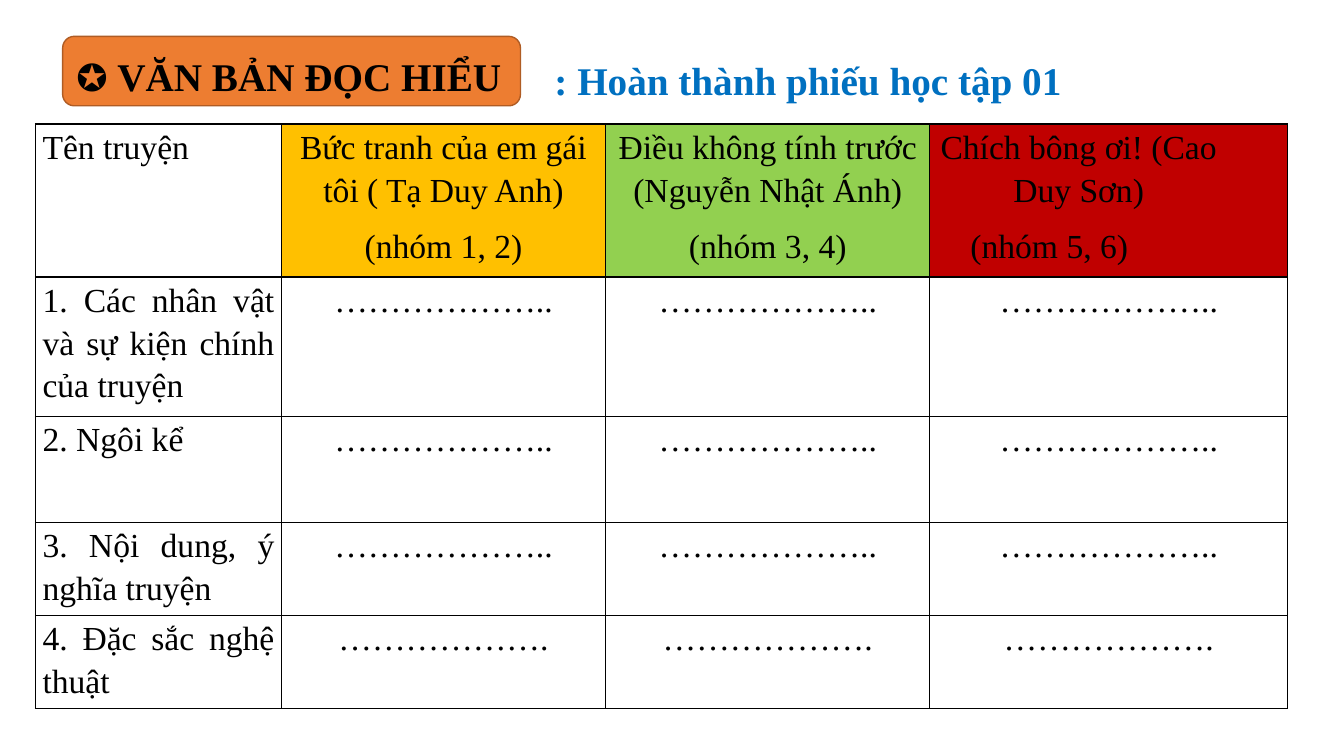
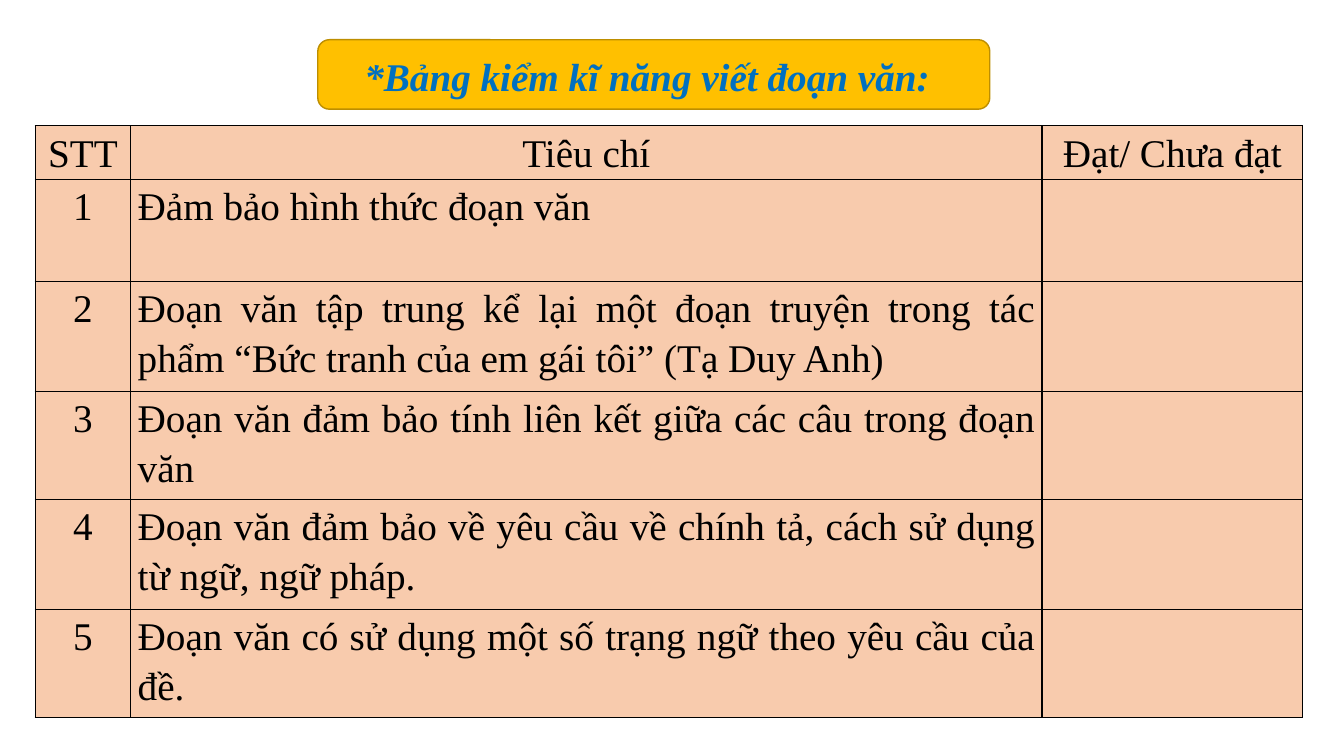
from dataclasses import dataclass

from lxml import etree
from pptx import Presentation
from pptx.dml.color import RGBColor
from pptx.enum import shapes, text
from pptx.oxml import ns
from pptx.util import Pt

LEFT, CENTER, JUSTIFY = text.PP_ALIGN.LEFT, text.PP_ALIGN.CENTER, text.PP_ALIGN.JUSTIFY


@dataclass(frozen=True)
class Theme:
    font: str = "Times New Roman"
    title_size: int = 28
    body_size: int = 24
    line_spacing: float = 1.15
    ink: str = "000000"
    blue: str = "0070C0"
    orange: str = "ED7D31"
    orange_edge: str = "AF5C24"
    gold: str = "FFC000"
    gold_edge: str = "BD8E00"
    green: str = "92D050"
    red: str = "C00000"
    peach: str = "F8CBAD"


THEME = Theme()


def rgb(value):
    return RGBColor.from_string(value)


def write(paragraph, words, size=THEME.title_size, color=THEME.ink, bold=False,
          italic=False, align=JUSTIFY, after=0):
    """Add a run to the paragraph and set the format of both."""
    paragraph.alignment = align
    paragraph.line_spacing = THEME.line_spacing
    paragraph.space_after = Pt(after)
    run = paragraph.add_run()
    run.text = words
    font = run.font
    font.name, font.size, font.bold, font.italic = THEME.font, Pt(size), bold, italic
    font.color.rgb = rgb(color)


def outline(cell):
    """Draw the four borders of a table cell; they must precede its fill."""
    properties = cell._tc.get_or_add_tcPr()
    for index, side in enumerate(("a:lnL", "a:lnR", "a:lnT", "a:lnB")):
        border = etree.Element(ns.qn(side), w=str(Pt(1)))
        fill = etree.SubElement(border, ns.qn("a:solidFill"))
        etree.SubElement(fill, ns.qn("a:srgbClr"), val=THEME.ink)
        properties.insert(index, border)


class Deck:
    def __init__(self):
        self.presentation = Presentation()
        self.presentation.slide_width = Pt(960)
        self.presentation.slide_height = Pt(540)
        self.slide = None

    def new_slide(self):
        self.slide = self.presentation.slides.add_slide(self.presentation.slide_layouts[5])

    def banner(self, left, top, width, height, fill, edge):
        band = self.slide.shapes.add_shape(
            shapes.MSO_SHAPE.ROUNDED_RECTANGLE, Pt(left), Pt(top), Pt(width), Pt(height))
        band.shadow.inherit = False
        band.fill.solid()
        band.fill.fore_color.rgb = rgb(fill)
        band.line.color.rgb = rgb(edge)
        band.line.width = Pt(1)

    def place(self, box, left, top, width, height):
        """Position a text holder and return its first paragraph."""
        box.left, box.top, box.width, box.height = Pt(left), Pt(top), Pt(width), Pt(height)
        frame = box.text_frame
        frame.word_wrap = True
        frame.auto_size = text.MSO_AUTO_SIZE.NONE
        frame.vertical_anchor = text.MSO_ANCHOR.TOP
        return frame.paragraphs[0]

    def title(self, *bounds):
        """Bring the title placeholder in front of its banner."""
        title = self.slide.shapes.title
        self.slide.shapes._spTree.append(title._element)
        return self.place(title, *bounds)

    def label(self, *bounds):
        return self.place(self.slide.shapes.add_textbox(0, 0, 0, 0), *bounds)

    def table(self, left, top, widths, heights, rows, size, after, align, fill):
        """Build a table; align and fill give a cell's style from its row and column."""
        grid = self.slide.shapes.add_table(
            len(rows), len(widths), Pt(left), Pt(top), Pt(sum(widths)), Pt(sum(heights))).table
        grid.first_row = grid.horz_banding = False
        for column, width in zip(grid.columns, widths):
            column.width = Pt(width)
        for r, (row, height) in enumerate(zip(rows, heights)):
            grid.rows[r].height = Pt(height)
            for c, words in enumerate(row):
                cell = grid.cell(r, c)
                cell.margin_left = cell.margin_right = Pt(5)
                cell.margin_top = cell.margin_bottom = 0
                color = fill(r, c)
                if color:
                    cell.fill.solid()
                    cell.fill.fore_color.rgb = rgb(color)
                else:
                    cell.fill.background()
                outline(cell)
                frame = cell.text_frame
                for number, line in enumerate(words.split("\n") if words else []):
                    paragraph = frame.add_paragraph() if number else frame.paragraphs[0]
                    write(paragraph, line, size=size, after=after, align=align(r, c))
        return grid


def worksheet(deck):
    deck.new_slide()
    deck.banner(44.8, 26, 327, 49.6, THEME.orange, THEME.orange_edge)
    heading = deck.title(47.5, 29, 473, 44)
    write(heading, "✪ ", after=10)
    write(heading, "VĂN BẢN ĐỌC HIỂU", bold=True, after=10)
    write(deck.label(389, 32, 462, 46), ": Hoàn thành phiếu học tập 01",
          color=THEME.blue, bold=True, after=10)

    stories = ["Tên truyện",
               "Bức tranh của em gái tôi ( Tạ Duy Anh)\n(nhóm 1, 2)",
               "Điều không tính trước (Nguyễn Nhật Ánh)\n(nhóm 3, 4)",
               "Chích bông ơi! (Cao Duy Sơn)\n(nhóm 5, 6)"]
    blank = "……………….."
    tasks = [("1. Các nhân vật và sự kiện chính của truyện", blank),
             ("2. Ngôi kể", blank),
             ("3. Nội dung, ý nghĩa truyện", blank),
             ("4. Đặc sắc nghệ thuật", "……………….")]
    story_fills = [None, THEME.gold, THEME.green, THEME.red]
    grid = deck.table(
        25.4, 88.6, [175.6, 231.6, 231.6, 255.6], [109.2, 99.6, 75.7, 66.4, 66.4],
        [stories] + [[task] + [answer] * 3 for task, answer in tasks],
        size=THEME.body_size, after=10,
        align=lambda r, c: CENTER if c else JUSTIFY,
        fill=lambda r, c: None if r else story_fills[c])
    last_story = grid.cell(0, 3)
    last_story.margin_right = Pt(48)
    group = last_story.text_frame.paragraphs[1]
    group.alignment = LEFT
    group._p.get_or_add_pPr().set("marL", str(Pt(24)))


def checklist(deck):
    deck.new_slide()
    deck.banner(227, 28.4, 480, 49.6, THEME.gold, THEME.gold_edge)
    write(deck.title(253, 28.4, 480, 43), "*Bảng kiểm kĩ năng viết đoạn văn:",
          color=THEME.blue, bold=True, italic=True, after=12)

    criteria = ["Đảm bảo hình thức đoạn văn",
                "Đoạn văn tập trung kể lại một đoạn truyện trong tác phẩm "
                "“Bức tranh của em gái tôi” (Tạ Duy Anh)",
                "Đoạn văn đảm bảo tính liên kết giữa các câu trong đoạn văn",
                "Đoạn văn đảm bảo về yêu cầu về chính tả, cách sử dụng từ ngữ, ngữ pháp.",
                "Đoạn văn có sử dụng một số trạng ngữ theo yêu cầu của đề."]
    rows = [["STT", "Tiêu chí", "Đạt/ Chưa đạt"]]
    rows += [[str(number), criterion, ""] for number, criterion in enumerate(criteria, 1)]
    deck.table(
        25.2, 89.8, [68.2, 651, 186.2], [38.4, 72.8, 78.5, 77.2, 78.5, 77.2], rows,
        size=THEME.title_size, after=12,
        align=lambda r, c: JUSTIFY if r and c == 1 else CENTER,
        fill=lambda r, c: THEME.peach)


def main():
    deck = Deck()
    worksheet(deck)
    checklist(deck)
    deck.presentation.save("out.pptx")


if __name__ == "__main__":
    main()
